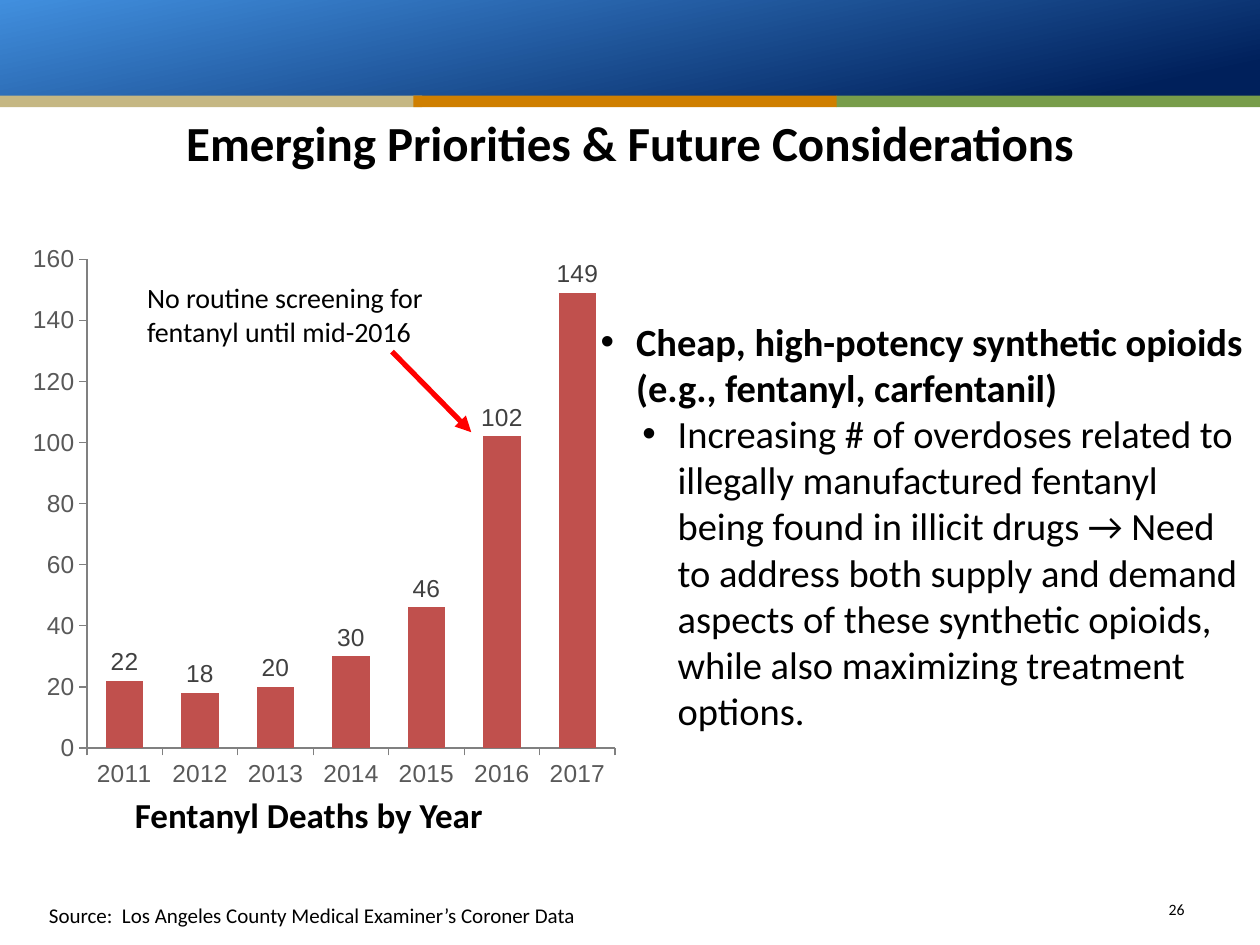
import pptx
import pptx.chart.data
import pptx.dml.color
import pptx.enum.chart
import pptx.enum.shapes
import pptx.enum.text
import pptx.oxml
import pptx.oxml.ns
import pptx.util
from dataclasses import dataclass

Pt = pptx.util.Pt
RGB = pptx.dml.color.RGBColor.from_string
qn = pptx.oxml.ns.qn
Align = pptx.enum.text.PP_ALIGN
Anchor = pptx.enum.text.MSO_ANCHOR
RECTANGLE = pptx.enum.shapes.MSO_SHAPE.RECTANGLE


@dataclass(frozen=True)
class Theme:
    font: str = "Calibri"
    chart_font: str = "Arial"
    text: str = "000000"
    navy: str = "00205B"
    sky: str = "418FDE"
    bands: tuple = ("C5B783", "CF7F00", "789D4A")
    bar: str = "C0504D"
    axis_line: str = "808080"
    axis_text: str = "595959"
    label_text: str = "404040"
    arrow: str = "FF0000"
    title_size: int = 28
    body_size: int = 22
    caption_size: int = 20
    callout_size: int = 16
    chart_size: int = 14
    source_size: int = 12
    number_size: int = 9


theme = Theme()


def style_font(font, size, color=theme.text, bold=False, name=theme.font):
    font.name, font.size, font.bold = name, Pt(size), bold
    font.color.rgb = RGB(color)


def add_text(left, top, width, height, text, size, bold=False,
             align=Align.LEFT, anchor=Anchor.TOP):
    box = slide.shapes.add_textbox(Pt(left), Pt(top), Pt(width), Pt(height))
    frame = box.text_frame
    frame.word_wrap = True
    frame.vertical_anchor = anchor
    paragraph = frame.paragraphs[0]
    paragraph.text = text
    paragraph.alignment = align
    style_font(paragraph.font, size, bold=bold)
    return frame


presentation = pptx.Presentation()
presentation.slide_width, presentation.slide_height = Pt(720), Pt(540)
slide = presentation.slides.add_slide(presentation.slide_layouts[5])

# Gradient banner
banner = slide.shapes.add_shape(RECTANGLE, 0, 0, Pt(720), Pt(55.4))
banner.shadow.inherit = False
banner.line.fill.background()
banner.fill.gradient()
banner.fill.gradient_angle = 102
for stop, position, color in zip(banner.fill.gradient_stops, (0.09, 1),
                                 (theme.navy, theme.sky)):
    stop.position = position
    stop.color.rgb = RGB(color)

# Colour bands under the banner
for left, color in zip((-0.7, 236.2, 478.1), theme.bands):
    band = slide.shapes.add_shape(RECTANGLE, Pt(left), Pt(54.7), Pt(242), Pt(6.5))
    band.shadow.inherit = False
    band.line.fill.background()
    band.fill.solid()
    band.fill.fore_color.rgb = RGB(color)

# Title
title = slide.shapes.title
title.left, title.top, title.width, title.height = 0, Pt(58.3), Pt(720), Pt(46)
title.text_frame.text = "Emerging Priorities & Future Considerations"
title.text_frame.vertical_anchor = Anchor.MIDDLE
title_paragraph = title.text_frame.paragraphs[0]
title_paragraph.alignment = Align.CENTER
style_font(title_paragraph.font, theme.title_size, bold=True)

# Bulleted text
body = add_text(336.2, 178, 383.8, 306,
                "Cheap, high-potency synthetic opioids (e.g., fentanyl, carfentanil)",
                theme.body_size, bold=True)
detail = body.add_paragraph()
detail.text = ("Increasing # of overdoses related to illegally manufactured fentanyl "
               "being found in illicit drugs → Need to address both supply and demand "
               "aspects of these synthetic opioids, while also maximizing treatment "
               "options.")
detail.level = 1
for paragraph, indent, bold in zip(body.paragraphs, (20.25, 44), (True, False)):
    properties = paragraph._p.get_or_add_pPr()
    properties.set("marL", str(Pt(indent)))
    properties.set("indent", str(-Pt(20.25)))
    for old_font in properties.findall(qn("a:defRPr")):
        properties.remove(old_font)
    bullet_font = properties.makeelement(qn("a:buFont"), {"typeface": theme.chart_font})
    bullet = properties.makeelement(qn("a:buChar"), {"char": "•"})
    properties.extend([bullet_font, bullet])
    style_font(paragraph.font, theme.body_size, bold=bold)

# Chart of deaths by year
chart_data = pptx.chart.data.CategoryChartData()
chart_data.categories = [str(year) for year in range(2011, 2018)]
chart_data.add_series("Series 1", (22, 18, 20, 30, 46, 102, 149))
chart = slide.shapes.add_chart(pptx.enum.chart.XL_CHART_TYPE.COLUMN_CLUSTERED,
                               Pt(11.5), Pt(135.4), Pt(347), Pt(321), chart_data).chart
chart.has_legend = False
chart.has_title = False
style_font(chart.font, theme.chart_size, name=theme.chart_font)

plot = chart.plots[0]
plot.vary_by_categories = False
plot.gap_width, plot.overlap = 100, -27
bars = plot.series[0].format.fill
bars.solid()
bars.fore_color.rgb = RGB(theme.bar)
plot.has_data_labels = True
labels = plot.data_labels
labels.show_value = True
labels.position = pptx.enum.chart.XL_LABEL_POSITION.OUTSIDE_END
style_font(labels.font, theme.chart_size, theme.label_text, name=theme.chart_font)

for axis in (chart.category_axis, chart.value_axis):
    axis.has_major_gridlines = False
    axis.major_tick_mark = pptx.enum.chart.XL_TICK_MARK.OUTSIDE
    axis.format.line.color.rgb = RGB(theme.axis_line)
    axis.format.line.width = Pt(0.75)
    style_font(axis.tick_labels.font, theme.chart_size, theme.axis_text,
               name=theme.chart_font)
chart.value_axis.minimum_scale, chart.value_axis.maximum_scale = 0, 160
chart.value_axis.major_unit = 20

# Fixed inner plot area
plot_area = chart._chartSpace.chart.plotArea
for old_layout in plot_area.findall(qn("c:layout")):
    plot_area.remove(old_layout)
layout = plot_area.makeelement(qn("c:layout"), {})
manual = layout.makeelement(qn("c:manualLayout"), {})
layout.append(manual)
for tag, value in (("layoutTarget", "inner"), ("xMode", "edge"), ("yMode", "edge"),
                   ("x", "0.11"), ("y", "0.04"), ("w", "0.87"), ("h", "0.87")):
    manual.append(manual.makeelement(qn("c:" + tag), {"val": value}))
plot_area.insert(0, layout)

# Caption, callout, source and slide number
add_text(2.9, 440.6, 347, 49.7, "Fentanyl Deaths by Year", theme.caption_size,
         bold=True, align=Align.CENTER, anchor=Anchor.MIDDLE)
add_text(77, 157, 180, 46, "No routine screening for fentanyl until mid-2016",
         theme.callout_size)
source = add_text(20.9, 512, 369.4, 21.8,
                  "Source: \u00a0Los Angeles County Medical Examiner’s Coroner Data".replace(
                      "\u00a0", " "), theme.source_size)
add_text(642.2, 510.5, 41.8, 21.6, "26", theme.number_size, align=Align.RIGHT)

# Arrow from the callout to the 2016 bar
arrow = slide.shapes.add_connector(pptx.enum.shapes.MSO_CONNECTOR.STRAIGHT,
                                   Pt(224), Pt(200.9), Pt(269.3), Pt(247))
arrow.line.color.rgb = RGB(theme.arrow)
arrow.line.width = Pt(3)
arrow.line._get_or_add_ln().append(
    pptx.oxml.parse_xml('<a:tailEnd %s type="triangle"/>' % pptx.oxml.ns.nsdecls("a")))
arrow_properties = arrow._element.spPr
arrow_properties.append(arrow_properties.makeelement(qn("a:effectLst"), {}))

presentation.save("out.pptx")
